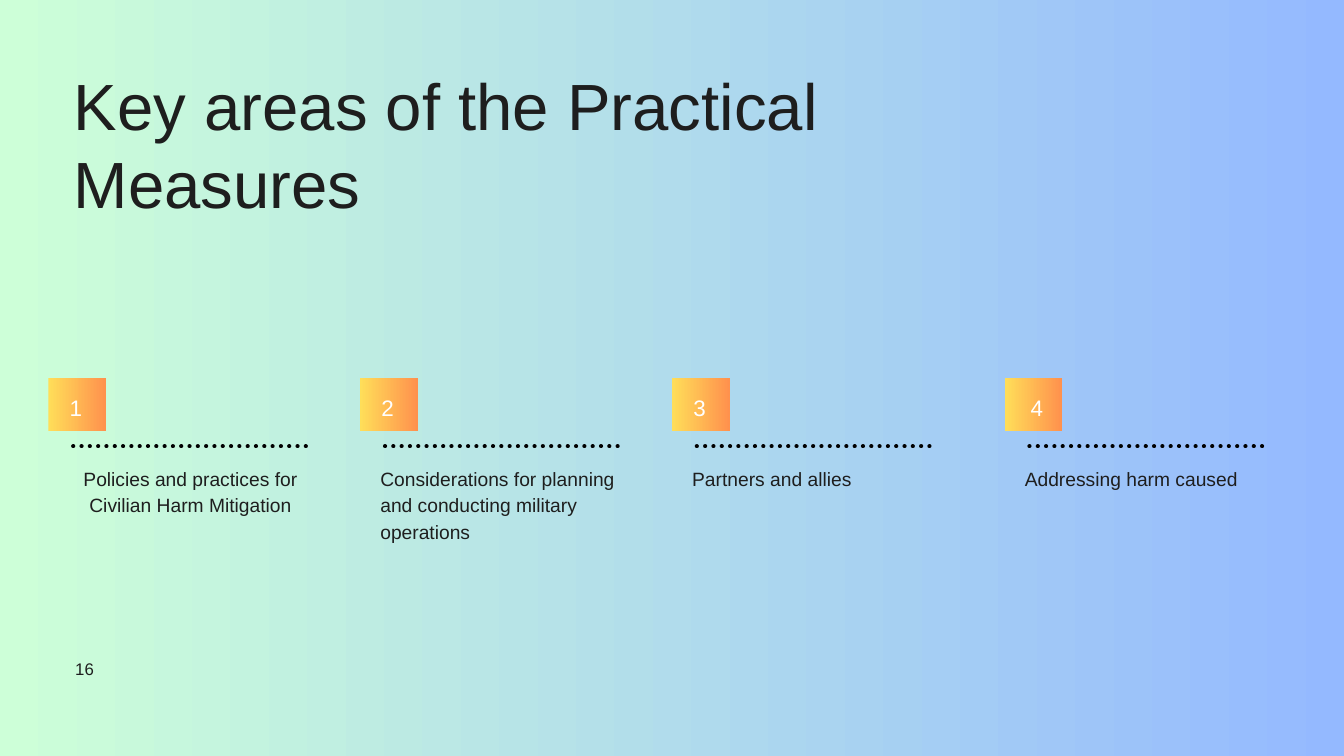
from lxml import etree
from pptx import Presentation
from pptx.dml.color import RGBColor
from pptx.enum import dml, shapes, text
from pptx.oxml.ns import qn
from pptx.util import Pt

# Content
TITLE = "Key areas of the Practical Measures"
PAGE_NUMBER = "16"
LEFT, CENTER = text.PP_ALIGN.LEFT, text.PP_ALIGN.CENTER
# label, alignment, badge left, label height, extra shift of the number
AREAS = [
    ("Policies and practices for Civilian Harm Mitigation", CENTER, 51.84, 77.8, 0),
    ("Considerations for planning and conducting military operations", LEFT, 385.92, 86.4, 0),
    ("Partners and allies", LEFT, 720, 29.5, 0),
    ("Addressing harm caused", LEFT, 1076.4, 29.5, 5),
]

# Style
COLORS = {"mint": "CDFFD8", "blue": "94B9FF", "yellow": "FFDE59", "orange": "FF914D",
          "ink": "1E1E1E", "white": "FFFFFF", "black": "000000"}
FONT = "Arial"
STYLES = {  # size, line spacing, colour
    "title": (70, 84, "ink"),
    "label": (20.6, 28.8, "ink"),
    "number": (24, 33.6, "white"),
    "page": (18, 25.2, "ink"),
}

# Layout
BADGE_TOP, BADGE_WIDTH, BADGE_HEIGHT = 404.6, 61.9, 56.9
LINE_OFFSET, LINE_TOP, LINE_WIDTH = 26.6, 478.1, 256
LABEL_OFFSET, LABEL_TOP, LABEL_WIDTH = 21.6, 496.1, 261.4
NUMBER_OFFSET, NUMBER_TOP, NUMBER_WIDTH, NUMBER_HEIGHT = -112, 417.6, 283, 36


def color(name):
    return RGBColor.from_string(COLORS[name])


def fill_gradient(fill, start, end):
    fill.gradient()
    fill.gradient_angle = 0
    for stop, position, name in zip(fill.gradient_stops, (0, 1), (start, end)):
        stop.position = position
        stop.color.rgb = color(name)


def write(shape, content, style, alignment=LEFT):
    size, spacing, ink = STYLES[style]
    frame = shape.text_frame
    frame.text = content
    frame_format = {"margin_left": 0, "margin_top": 0, "margin_right": 0, "margin_bottom": 0,
                    "word_wrap": True, "vertical_anchor": text.MSO_ANCHOR.TOP,
                    "auto_size": text.MSO_AUTO_SIZE.SHAPE_TO_FIT_TEXT}
    for name, value in frame_format.items():
        setattr(frame, name, value)
    paragraph = frame.paragraphs[0]
    paragraph.alignment = alignment
    paragraph.line_spacing = Pt(spacing)
    font = paragraph.runs[0].font
    for name, value in {"name": FONT, "size": Pt(size), "bold": False}.items():
        setattr(font, name, value)
    font.color.rgb = color(ink)


def add_text(parent, box, content, style, alignment=LEFT):
    write(parent.add_textbox(*map(Pt, box)), content, style, alignment)


def add_dotted_line(parent, left, top, width):
    connector = parent.add_connector(shapes.MSO_CONNECTOR.STRAIGHT,
                                     Pt(left), Pt(top), Pt(left + width), Pt(top))
    connector.line.color.rgb = color("black")
    connector.line.width = Pt(4.45)
    connector.line.dash_style = dml.MSO_LINE.ROUND_DOT
    properties = connector._element.spPr
    properties.find(qn("a:ln")).set("cap", "rnd")
    etree.SubElement(properties, qn("a:effectLst"))


def add_badge(parent, left):
    badge = parent.add_shape(shapes.MSO_SHAPE.RECTANGLE, Pt(left), Pt(BADGE_TOP),
                             Pt(BADGE_WIDTH), Pt(BADGE_HEIGHT))
    badge.shadow.inherit = False
    badge.line.fill.background()
    fill_gradient(badge.fill, "yellow", "orange")


def main():
    presentation = Presentation()
    presentation.slide_width, presentation.slide_height = Pt(1440), Pt(810)
    slide = presentation.slides.add_slide(presentation.slide_layouts[5])
    fill_gradient(slide.background.fill, "mint", "blue")

    # Title
    title = slide.shapes.title
    title.left, title.top, title.width, title.height = map(Pt, (79.2, 69.8, 1031.8, 177.8))
    write(title, TITLE, "title")

    # Four areas: dotted line, label, badge and number
    for number, (label, alignment, left, height, shift) in enumerate(AREAS, 1):
        group = slide.shapes.add_group_shape().shapes
        add_dotted_line(group, left + LINE_OFFSET, LINE_TOP, LINE_WIDTH)
        add_text(group, (left + LABEL_OFFSET, LABEL_TOP, LABEL_WIDTH, height),
                 label, "label", alignment)
        add_badge(group, left)
        add_text(slide.shapes, (left + NUMBER_OFFSET + shift, NUMBER_TOP, NUMBER_WIDTH,
                                NUMBER_HEIGHT), str(number), "number", CENTER)

    # Page number
    add_text(slide.shapes, (80.6, 702, 53.3, 27.4), PAGE_NUMBER, "page")
    presentation.save("out.pptx")


if __name__ == "__main__":
    main()
